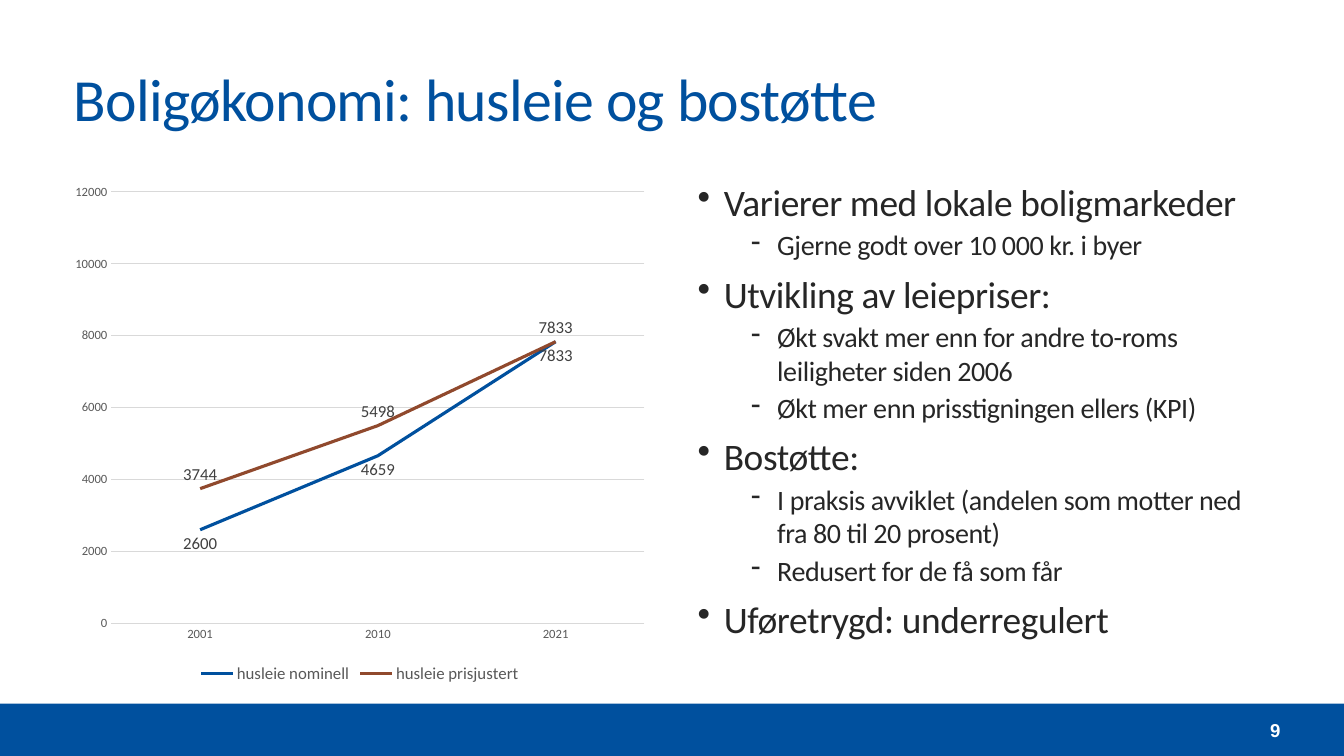
import pptx
import pptx.chart.data
import pptx.dml.color
import pptx.enum.chart
import pptx.enum.shapes
import pptx.enum.text
import pptx.oxml
import pptx.oxml.ns
import pptx.util

WIDTH, HEIGHT = 13.33, 7.5
MARGIN, COLUMN, GUTTER = 0.63, 5.88, 0.31
CONTENT_TOP, CONTENT_HEIGHT = 1.73, 5.09
FOOTER_HEIGHT = 0.52
FONT = "Calibri"
BLUE, BROWN, INK = "00509E", "90492D", "262626"
GREY, GRID, LABEL = "595959", "D9D9D9", "404040"

POINTS = [
    (0, "Varierer med lokale boligmarkeder"),
    (1, "Gjerne godt over 10 000 kr. i byer"),
    (0, "Utvikling av leiepriser:"),
    (1, "Økt svakt mer enn for andre to-roms leiligheter siden 2006"),
    (1, "Økt mer enn prisstigningen ellers (KPI)"),
    (0, "Bostøtte:"),
    (1, "I praksis avviklet (andelen som motter ned fra 80 til 20 prosent)"),
    (1, "Redusert for de få som får"),
    (0, "Uføretrygd: underregulert"),
]
LEVELS = [
    {"size": 26.7, "before": 6.7, "bullet": "•", "indent": 0.26},
    {"size": 20, "before": 2.7, "bullet": "-", "indent": 0.79},
]
LabelPosition = pptx.enum.chart.XL_LABEL_POSITION
RENTS = [
    ("husleie nominell", (2600, 4659, 7833), BLUE, LabelPosition.BELOW),
    ("husleie prisjustert", (3744, 5498, 7833), BROWN, LabelPosition.ABOVE),
]


def colour(hex_code):
    return pptx.dml.color.RGBColor.from_string(hex_code)


def inches(box):
    return [pptx.util.Inches(length) for length in box]


def style(font, size, hex_code, name=FONT, bold=False):
    font.name = name
    font.size = pptx.util.Pt(size)
    font.bold = bold
    font.color.rgb = colour(hex_code)


def stroke(line, hex_code, width):
    line.color.rgb = colour(hex_code)
    line.width = pptx.util.Pt(width)


def add_frame(slide, box, anchor):
    frame = slide.shapes.add_textbox(*inches(box)).text_frame
    frame.word_wrap = True
    frame.vertical_anchor = anchor
    return frame


def add_run(paragraph, words, size, hex_code, spacing=0, **font):
    run = paragraph.add_run()
    run.text = words
    style(run.font, size, hex_code, **font)
    if spacing:
        run.font._element.set("spc", str(round(spacing * 100)))


def add_footer(slide, box, number):
    left, top, width, height = box
    band = slide.shapes.add_shape(pptx.enum.shapes.MSO_SHAPE.RECTANGLE, *inches(box))
    band.shadow.inherit = False
    band.fill.solid()
    band.fill.fore_color.rgb = colour(BLUE)
    band.line.fill.background()
    number_width = 0.95
    number_box = (left + width - MARGIN - number_width, top, number_width, height)
    frame = add_frame(slide, number_box, pptx.enum.text.MSO_ANCHOR.MIDDLE)
    frame.margin_left = frame.margin_right = 0
    frame.margin_top = frame.margin_bottom = 0
    paragraph = frame.paragraphs[0]
    paragraph.alignment = pptx.enum.text.PP_ALIGN.RIGHT
    add_run(paragraph, number, 13.3, "FFFFFF", name="Arial", bold=True)


def add_title(slide, box, words):
    frame = add_frame(slide, box, pptx.enum.text.MSO_ANCHOR.MIDDLE)
    add_run(frame.paragraphs[0], words, 42.7, BLUE, spacing=-0.5)


def add_points(slide, box, points):
    frame = add_frame(slide, box, pptx.enum.text.MSO_ANCHOR.TOP)
    for index, (depth, words) in enumerate(points):
        level = LEVELS[depth]
        paragraph = frame.add_paragraph() if index else frame.paragraphs[0]
        paragraph.level = depth
        properties = paragraph._p.get_or_add_pPr()
        properties.set("marL", str(pptx.util.Inches(level["indent"])))
        properties.set("indent", str(pptx.util.Inches(-0.26)))
        bullet = pptx.oxml.parse_xml(
            f'<a:buChar {pptx.oxml.ns.nsdecls("a")} char="{level["bullet"]}"/>')
        properties.append(bullet)
        paragraph.space_before = pptx.util.Pt(level["before"] if index else 0)
        add_run(paragraph, words, level["size"], INK, spacing=-0.3)


def add_rent_chart(slide, box, years, rents):
    data = pptx.chart.data.CategoryChartData()
    data.categories = years
    for name, values, _, _ in rents:
        data.add_series(name, values)
    chart = slide.shapes.add_chart(
        pptx.enum.chart.XL_CHART_TYPE.LINE, *inches(box), data).chart
    style(chart.font, 10, "000000")
    chart.has_title = False
    chart.has_legend = True
    chart.legend.position = pptx.enum.chart.XL_LEGEND_POSITION.BOTTOM
    chart.legend.include_in_layout = False
    style(chart.legend.font, 12, GREY)

    for axis in (chart.category_axis, chart.value_axis):
        axis.major_tick_mark = pptx.enum.chart.XL_TICK_MARK.NONE
        axis.minor_tick_mark = pptx.enum.chart.XL_TICK_MARK.NONE
        style(axis.tick_labels.font, 9, GREY)
    stroke(chart.category_axis.format.line, GRID, 0.75)
    rent_axis = chart.value_axis
    rent_axis.format.line.fill.background()
    rent_axis.minimum_scale, rent_axis.maximum_scale = 0, 12000
    rent_axis.major_unit = 2000
    rent_axis.has_major_gridlines = True
    stroke(rent_axis.major_gridlines.format.line, GRID, 0.75)

    plot = chart.plots[0]
    plot.vary_by_categories = False
    for series, (_, _, hex_code, position) in zip(plot.series, rents):
        series.smooth = False
        series.marker.style = pptx.enum.chart.XL_MARKER_STYLE.NONE
        stroke(series.format.line, hex_code, 2.25)
        labels = series.data_labels
        labels.show_value = True
        labels.position = position
        style(labels.font, 12, LABEL)


def main():
    deck = pptx.Presentation()
    deck.slide_width, deck.slide_height = inches((WIDTH, HEIGHT))
    slide = deck.slides.add_slide(deck.slide_layouts[6])
    add_footer(slide, (0, HEIGHT - FOOTER_HEIGHT, WIDTH, FOOTER_HEIGHT), "9")
    add_title(slide, (MARGIN, 0.31, WIDTH - 2 * MARGIN, 1.31),
              "Boligøkonomi: husleie og bostøtte")
    chart_box, points_box = [
        (MARGIN + column * (COLUMN + GUTTER), CONTENT_TOP, COLUMN, CONTENT_HEIGHT)
        for column in range(2)]
    add_points(slide, points_box, POINTS)
    add_rent_chart(slide, chart_box, ("2001", "2010", "2021"), RENTS)
    deck.save("out.pptx")


if __name__ == "__main__":
    main()
